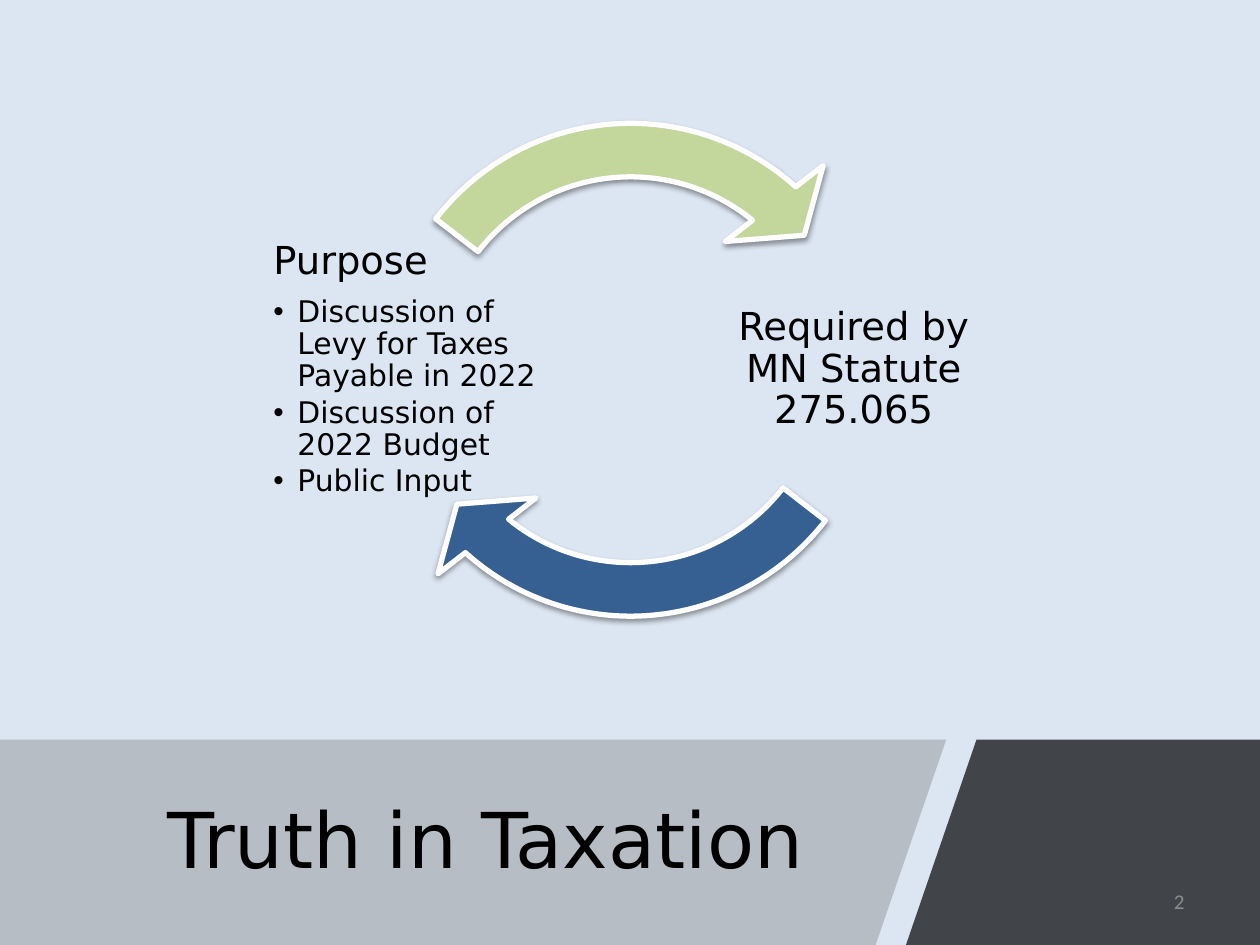
from dataclasses import dataclass

import pptx
import pptx.dml.color
import pptx.enum.shapes
import pptx.enum.text
import pptx.oxml
import pptx.oxml.ns
import pptx.util
from pptx.util import Inches

FONT = "DejaVu Sans"
BAND_TOP, SLIDE_WIDTH, SLIDE_HEIGHT = 5.87, 10, 7.5
SLANT = 0.56
TEXT_SIZE = 2.17
TEXT_TOP = 1.85
ALIGN = pptx.enum.text.PP_ALIGN


@dataclass
class Band:
    points: list[tuple[float, float]]
    color: str
    opacity: int


@dataclass
class Arrow:
    color: str
    turn: float  # in units of 100000 / 60000 degrees


@dataclass
class Line:
    text: str
    size: float
    space_after: float = 0
    bullet: bool = False


BANDS = [
    Band([(0, BAND_TOP), (7.51, BAND_TOP), (7.51 - SLANT, SLIDE_HEIGHT), (0, SLIDE_HEIGHT)],
         "808080", 40),
    Band([(7.75, BAND_TOP), (SLIDE_WIDTH, BAND_TOP), (SLIDE_WIDTH, SLIDE_HEIGHT),
          (7.75 - SLANT, SLIDE_HEIGHT)], "000000", 70),
]
HALF_TURN = 108
ARROWS = [Arrow("376092", 0), Arrow("C3D69B", HALF_TURN)]
PURPOSE = [Line("Purpose", 22, 7.7)] + [
    Line(text, 17, 2.55, bullet=True)
    for text in ("Discussion of Levy for Taxes Payable in 2022",
                 "Discussion of 2022 Budget", "Public Input")
]
STATUTE = [Line("Required by MN Statute 275.065", 22, 7.7)]


def rgb(color: str) -> pptx.dml.color.RGBColor:
    return pptx.dml.color.RGBColor.from_string(color)


def add_xml(parent, xml: str) -> None:
    """Append a DrawingML element such as '<a:buNone/>' to parent."""
    tag, rest = xml[1:].split(" ", 1) if " " in xml else (xml[1:-2], "/>")
    namespace = pptx.oxml.ns.nsdecls("a")
    parent.append(pptx.oxml.parse_xml(f"<{tag} {namespace} {rest}"))


def place(shape, left: float, top: float, width: float, height: float) -> None:
    shape.left, shape.top = Inches(left), Inches(top)
    shape.width, shape.height = Inches(width), Inches(height)


def set_lines(shape, lines: list[Line], align, color: str = "000000",
              font: str = FONT, spacing: float = 1, inset: float | None = None) -> None:
    frame = shape.text_frame
    frame.word_wrap = True
    frame.auto_size = pptx.enum.text.MSO_AUTO_SIZE.NONE
    frame.vertical_anchor = pptx.enum.text.MSO_ANCHOR.MIDDLE
    if inset is not None:
        frame.margin_left = frame.margin_right = Inches(inset)
        frame.margin_top = frame.margin_bottom = Inches(inset)
    frame.text = "\n".join(line.text for line in lines)
    for paragraph, line in zip(frame.paragraphs, lines):
        paragraph.alignment = align
        paragraph.line_spacing = spacing
        paragraph.space_before = pptx.util.Pt(0)
        paragraph.space_after = pptx.util.Pt(line.space_after)
        paragraph.level = 1 if line.bullet else 0
        indent = Inches(0.19) if line.bullet else 0
        properties = paragraph._p.get_or_add_pPr()
        properties.set("marL", str(indent))
        properties.set("indent", str(-indent))
        add_xml(properties, '<a:buChar char="•"/>' if line.bullet else "<a:buNone/>")
        for run in paragraph.runs:
            run.font.name = font
            run.font.size = pptx.util.Pt(line.size)
            run.font.color.rgb = rgb(color)


def draw_band(slide, band: Band) -> None:
    """Draw a translucent band behind the title."""
    points = [(Inches(x), Inches(y)) for x, y in band.points]
    builder = slide.shapes.build_freeform(*points[0])
    builder.add_line_segments(points[1:], close=True)
    shape = builder.convert_to_shape()
    shape.shadow.inherit = False
    shape.fill.solid()
    shape.fill.fore_color.rgb = rgb(band.color)
    shape.line.fill.background()
    color = shape.element.find(".//" + pptx.oxml.ns.qn("a:srgbClr"))
    add_xml(color, f'<a:alpha val="{band.opacity * 1000}"/>')
    slide.shapes.title.element.addprevious(shape.element)


def draw_arrow(slide, arrow: Arrow) -> None:
    shape = slide.shapes.add_shape(
        pptx.enum.shapes.MSO_SHAPE.CIRCULAR_ARROW,
        Inches(2.77), Inches(0.7), Inches(4.47), Inches(4.47))
    for index, value in enumerate((0.095, 6.85, 78.5 + arrow.turn, 22.65 + arrow.turn, 0.11)):
        shape.adjustments[index] = value
    shape.fill.solid()
    shape.fill.fore_color.rgb = rgb(arrow.color)
    shape.line.color.rgb = rgb("FFFFFF")
    shape.line.width = pptx.util.Pt(3)
    shape.shadow.inherit = False
    effects = shape.element.find(".//" + pptx.oxml.ns.qn("a:effectLst"))
    blur, distance = pptx.util.Pt(3.1), pptx.util.Pt(1.6)
    add_xml(effects, f'<a:outerShdw blurRad="{blur}" dist="{distance}" dir="5400000" '
                     'rotWithShape="0"><a:srgbClr val="000000"><a:alpha val="38000"/>'
                     '</a:srgbClr></a:outerShdw>')


def add_text_box(slide, left: float, top: float, width: float, height: float):
    return slide.shapes.add_textbox(Inches(left), Inches(top), Inches(width), Inches(height))


def main() -> None:
    presentation = pptx.Presentation()
    presentation.slide_width = Inches(SLIDE_WIDTH)
    presentation.slide_height = Inches(SLIDE_HEIGHT)
    slide = presentation.slides.add_slide(presentation.slide_layouts[1])
    slide.background.fill.solid()
    slide.background.fill.fore_color.rgb = rgb("DCE6F2")

    for band in BANDS:
        draw_band(slide, band)
    title = slide.shapes.title
    place(title, 0.69, 6.05, 6.33, 1.2)
    set_lines(title, [Line("Truth in Taxation", 44)], ALIGN.CENTER)

    purpose = slide.placeholders[1]
    place(purpose, 2.14, TEXT_TOP, TEXT_SIZE, TEXT_SIZE)
    set_lines(purpose, PURPOSE, ALIGN.LEFT, spacing=0.9, inset=0.03)
    statute = add_text_box(slide, 5.69, TEXT_TOP, TEXT_SIZE, TEXT_SIZE)
    set_lines(statute, STATUTE, ALIGN.CENTER, spacing=0.9, inset=0.03)
    for arrow in ARROWS:
        draw_arrow(slide, arrow)

    number = add_text_box(slide, 7.17, 6.95, 2.33, 0.4)
    set_lines(number, [Line("2", 12)], ALIGN.RIGHT, color="8C8C8C", font="Calibri")
    presentation.save("out.pptx")


if __name__ == "__main__":
    main()
